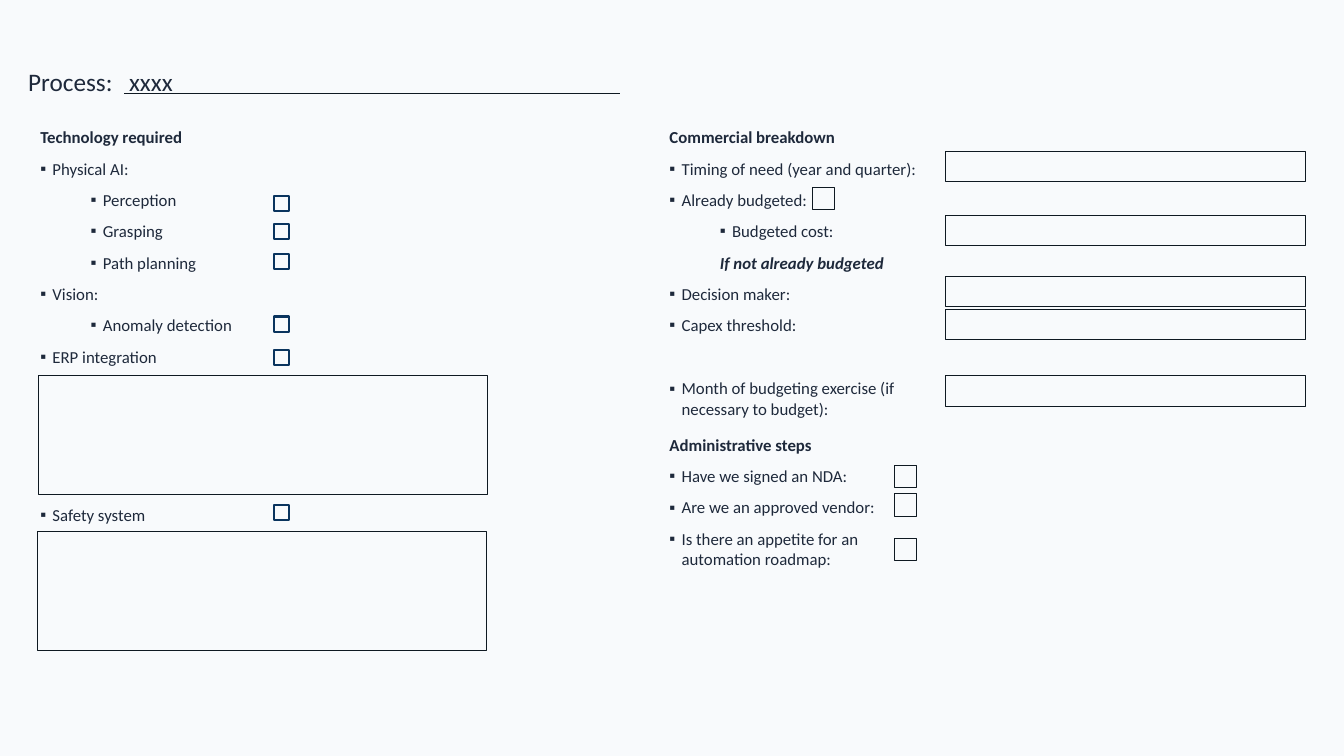
from lxml.etree import SubElement
from pptx import Presentation
from pptx.dml.color import RGBColor
from pptx.enum.shapes import MSO_CONNECTOR, MSO_SHAPE
from pptx.enum.text import MSO_ANCHOR, MSO_AUTO_SIZE, PP_ALIGN
from pptx.oxml.ns import qn
from pptx.util import Inches, Pt

BACKGROUND, INK, OUTLINE, NAVY = "F8FAFC", "1E293B", "0F1922", "0A345E"
TITLE = "Process:\txxxx"
TITLE_BOX = (0.28, 0.69, 6.1, 0.39)
TITLE_TAB = 1.0
TITLE_RULE = (1.23, 0.93, 6.15, 0.93)

LINE_PITCH, SPACE_BEFORE = 22.65, 8
STYLES = {
    "heading": {"level": 0, "margin": 0, "indent": 0, "bullet": False, "font": {"bold": True, "italic": False}},
    "item": {"level": 0, "margin": 0.12, "indent": -0.12, "bullet": True, "font": {"bold": False, "italic": False}},
    "subitem": {"level": 1, "margin": 0.62, "indent": -0.12, "bullet": True, "font": {"bold": False, "italic": False}},
    "note": {"level": 1, "margin": 0.5, "indent": 0, "bullet": False, "font": {"bold": True, "italic": True}},
}
LISTS = [
    ((0.3, 1.21, 2.84, 4.07), [
        ("heading", "Technology required", 0),
        ("item", "Physical AI:", 0),
        ("subitem", "Perception", 0),
        ("subitem", "Grasping", 0),
        ("subitem", "Path planning", 0),
        ("item", "Vision:", 0),
        ("subitem", "Anomaly detection", 0),
        ("item", "ERP integration", 0),
        ("item", "Safety system", 4),
    ]),
    ((6.54, 1.21, 2.84, 3.02), [
        ("heading", "Commercial breakdown", 0),
        ("item", "Timing of need (year and quarter):", 0),
        ("item", "Already budgeted:", 0),
        ("subitem", "Budgeted cost:", 0),
        ("note", "If not already budgeted", 0),
        ("item", "Decision maker:", 0),
        ("item", "Capex threshold:", 0),
        ("item", "Month of budgeting exercise (if necessary to budget):", 1),
    ]),
    ((6.54, 4.26, 2.84, 1.45), [
        ("heading", "Administrative steps", 0),
        ("item", "Have we signed an NDA:", 0),
        ("item", "Are we an approved vendor:", 0),
        ("item", "Is there an appetite for an automation roadmap:", 0),
    ]),
]
BOX_GROUPS = [
    {"size": (4.46, 1.18), "line": (OUTLINE, 0.75), "places": [(0.38, 3.73), (0.37, 5.27)]},
    {"size": (0.15, 0.15), "line": (NAVY, 1.5),
     "places": [(2.72, top) for top in (1.94, 2.22, 2.52, 3.14, 3.47, 5.01)]},
    {"size": (3.57, 0.3), "line": (OUTLINE, 0.75),
     "places": [(9.38, top) for top in (1.5, 2.14, 2.74, 3.07, 3.73)]},
    {"size": (0.22, 0.22), "line": (OUTLINE, 0.75),
     "places": [(8.06, 1.86)] + [(8.87, top) for top in (4.62, 4.9, 5.34)]},
]


def color(value):
    return RGBColor.from_string(value)


def set_attributes(target, values):
    for name, value in values.items():
        setattr(target, name, value)


def place(shape, box):
    set_attributes(shape, dict(zip(("left", "top", "width", "height"), map(Inches, box))))


def format_frame(frame, horizontal, vertical):
    set_attributes(frame, {
        "word_wrap": True, "auto_size": MSO_AUTO_SIZE.NONE, "vertical_anchor": MSO_ANCHOR.TOP,
        "margin_left": Inches(horizontal), "margin_right": Inches(horizontal),
        "margin_top": Inches(vertical), "margin_bottom": Inches(vertical),
    })


def add_run(paragraph, text, size, values):
    run = paragraph.add_run()
    run.text = text
    set_attributes(run.font, {"name": "Calibri", "size": Pt(size), **values})
    run.font.color.rgb = color(INK)


def format_line(line, value, width):
    line.color.rgb = color(value)
    line.width = Pt(width)


def add_title(shape):
    place(shape, TITLE_BOX)
    format_frame(shape.text_frame, 0, 0)
    paragraph = shape.text_frame.paragraphs[0]
    set_attributes(paragraph, {"alignment": PP_ALIGN.LEFT, "line_spacing": 0.9})
    tabs = SubElement(paragraph._p.get_or_add_pPr(), qn("a:tabLst"))
    SubElement(tabs, qn("a:tab"), pos=str(Inches(TITLE_TAB)), algn="l")
    add_run(paragraph, TITLE, 18, {"bold": False})


def add_list(shape, box, entries):
    place(shape, box)
    frame = shape.text_frame
    format_frame(frame, 0.1, 0.05)
    for index, (kind, text, skipped_lines) in enumerate(entries):
        style = STYLES[kind]
        paragraph = frame.add_paragraph() if index else frame.paragraphs[0]
        space = SPACE_BEFORE + skipped_lines * LINE_PITCH if index else 0
        set_attributes(paragraph, {
            "level": style["level"], "alignment": PP_ALIGN.LEFT, "line_spacing": 1.0,
            "space_before": Pt(space), "space_after": Pt(0),
        })
        properties = paragraph._p.get_or_add_pPr()
        properties.set("marL", str(Inches(style["margin"])))
        properties.set("indent", str(Inches(style["indent"])))
        if style["bullet"]:
            bullet_color = SubElement(properties, qn("a:buClr"))
            SubElement(bullet_color, qn("a:srgbClr"), val=INK)
            SubElement(properties, qn("a:buChar"), char="▪")
        else:
            SubElement(properties, qn("a:buNone"))
        add_run(paragraph, text, 12, style["font"])


def add_box(slide, place_at, size, line):
    shape = slide.shapes.add_shape(MSO_SHAPE.RECTANGLE, *map(Inches, place_at + size))
    shape.shadow.inherit = False
    shape.fill.solid()
    shape.fill.fore_color.rgb = color(BACKGROUND)
    format_line(shape.line, *line)


def main():
    presentation = Presentation()
    set_attributes(presentation, {"slide_width": Inches(13.33), "slide_height": Inches(7.5)})
    slide = presentation.slides.add_slide(presentation.slide_layouts.get_by_name("Comparison"))
    slide.background.fill.solid()
    slide.background.fill.fore_color.rgb = color(BACKGROUND)

    add_title(slide.shapes.title)
    bodies = [shape for shape in slide.placeholders if shape.placeholder_format.idx > 0]
    for shape, (box, entries) in zip(bodies, LISTS):
        add_list(shape, box, entries)
    for shape in bodies[len(LISTS):]:
        shape.element.getparent().remove(shape.element)

    rule = slide.shapes.add_connector(MSO_CONNECTOR.STRAIGHT, *map(Inches, TITLE_RULE))
    format_line(rule.line, OUTLINE, 0.75)
    SubElement(rule.element.spPr, qn("a:effectLst"))

    for group in BOX_GROUPS:
        for place_at in group["places"]:
            add_box(slide, place_at, group["size"], group["line"])
    presentation.save("out.pptx")


if __name__ == "__main__":
    main()
